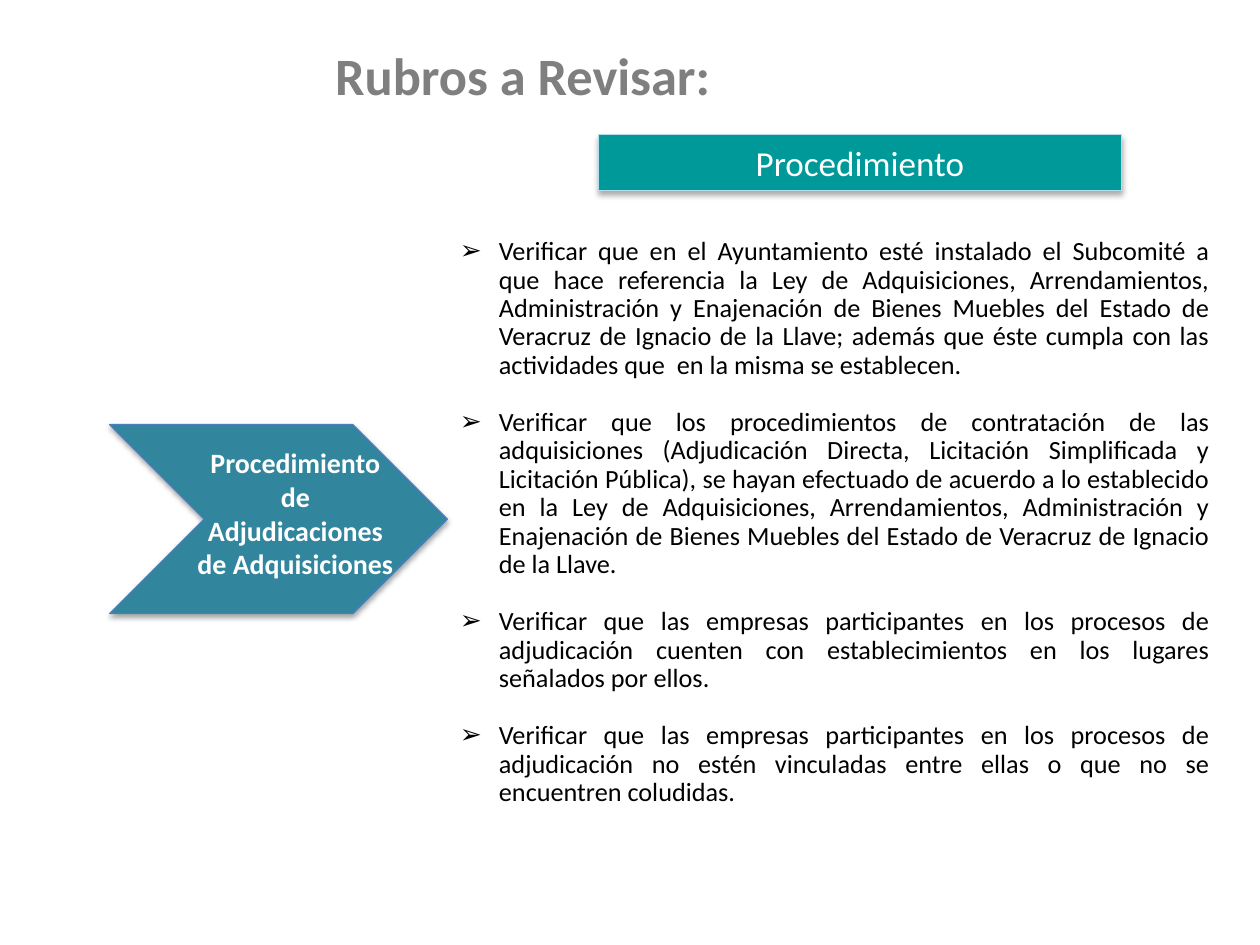
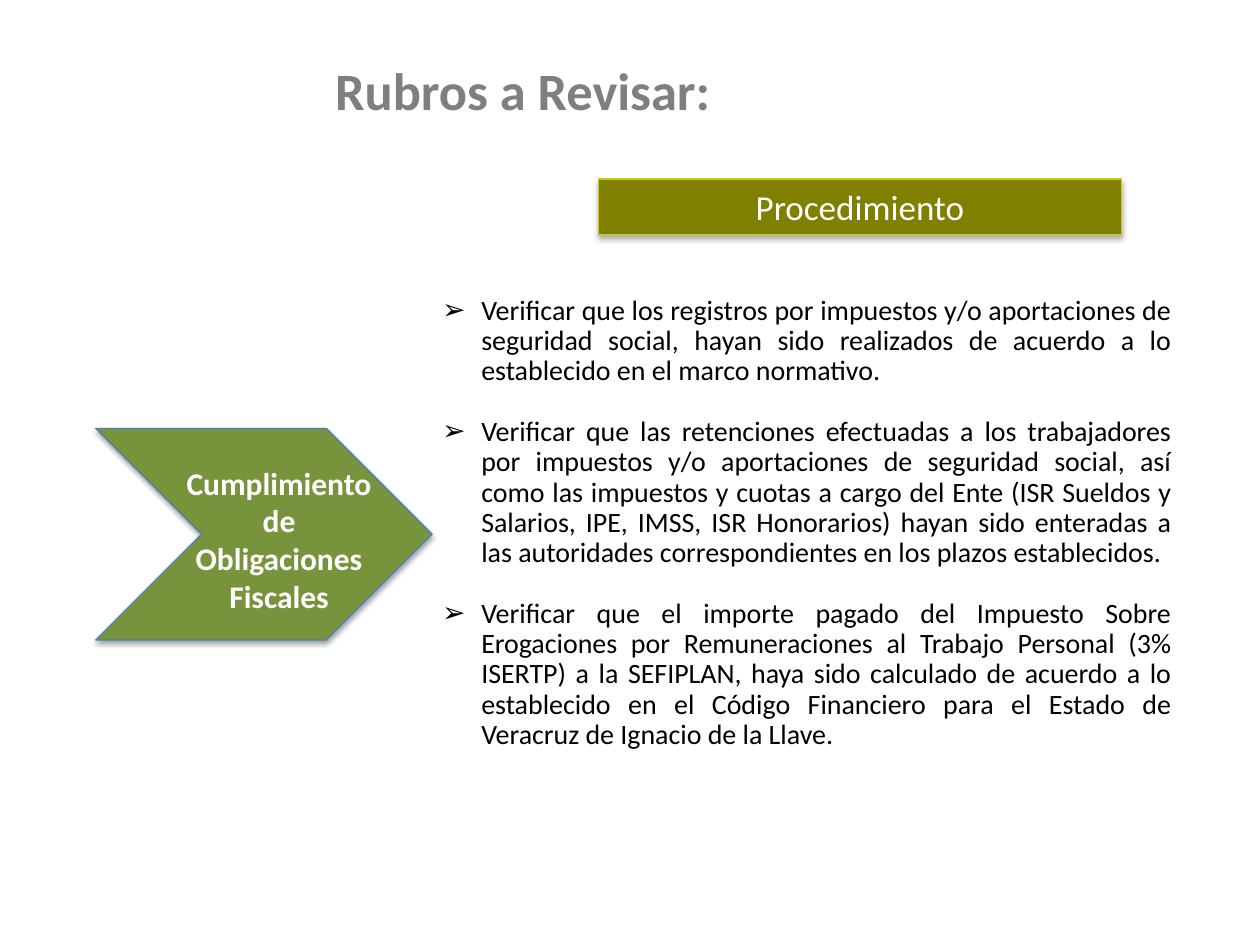
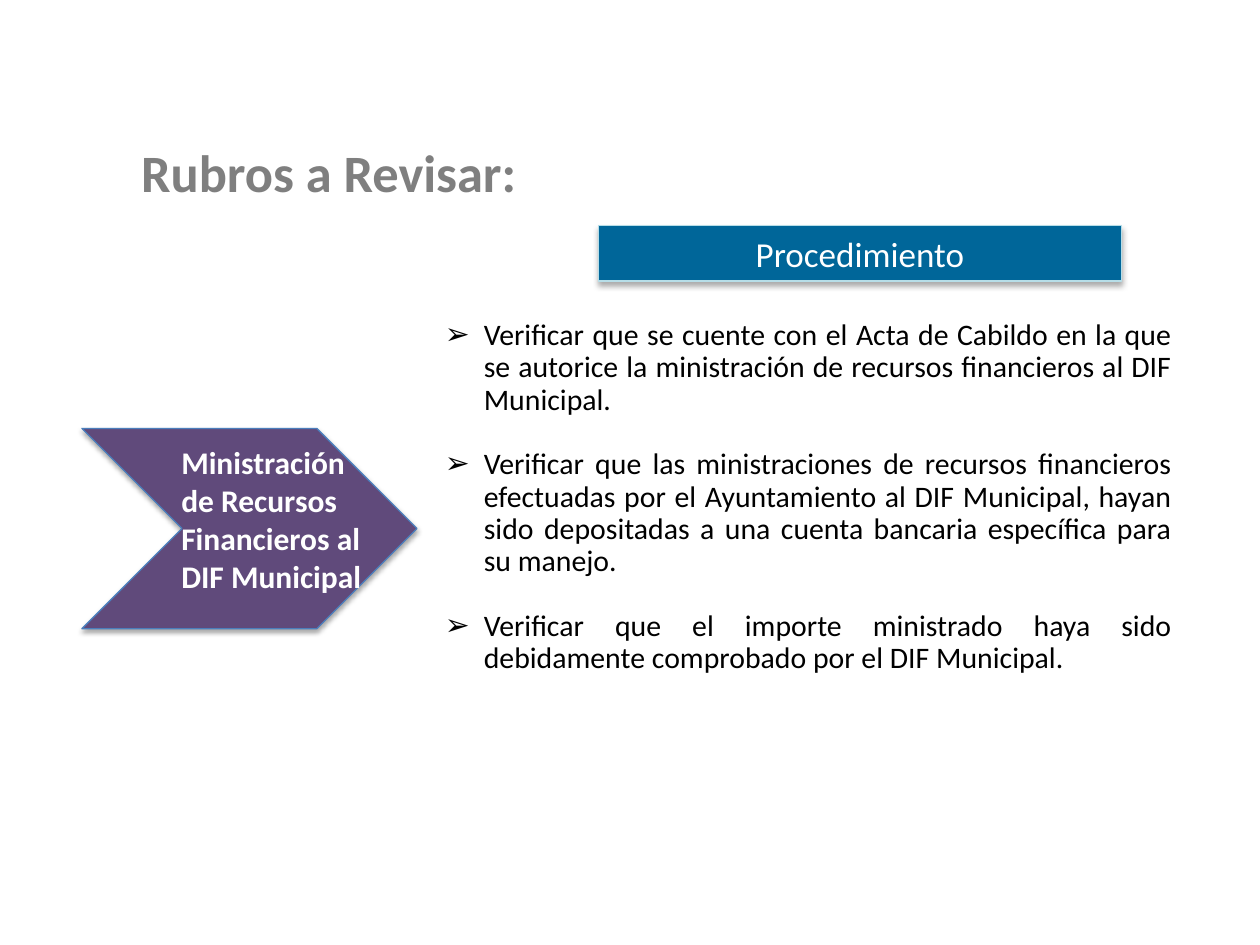
from lxml.etree import SubElement
from pptx import Presentation
from pptx.dml.color import RGBColor
from pptx.enum.shapes import MSO_SHAPE
from pptx.enum.text import MSO_ANCHOR, MSO_AUTO_SIZE, PP_ALIGN
from pptx.oxml.ns import qn
from pptx.util import Inches, Pt

CHEVRON, RECT = MSO_SHAPE.CHEVRON, MSO_SHAPE.RECTANGLE
TOP, MIDDLE = MSO_ANCHOR.TOP, MSO_ANCHOR.MIDDLE
LEFT, CENTER, JUSTIFY = PP_ALIGN.LEFT, PP_ALIGN.CENTER, PP_ALIGN.JUSTIFY
NO_FIT = MSO_AUTO_SIZE.NONE

# Shared look
FONT = "Calibri"
COLORS = {
    "title": "7F7F7F", "text": "000000", "white": "FFFFFF", "edge": "4B7EBC",
    "sky": "B7DEE8", "lime": "CCCC00", "teal": "31859C", "sea": "009999",
    "green": "77933C", "olive": "808000", "plum": "604A7B", "blue": "006699",
}
WIDTH, HEIGHT = Inches(10), Inches(7.5)
COL, ROW = WIDTH / 100, HEIGHT / 75
TITLE, BAND = "Rubros a Revisar:", "Procedimiento"
INDENT = Inches(0.31)
LEADING = 0.9
LINE = 1.22 * LEADING  # height of a text line, in font sizes

# Boxes are left, top, width, height in columns and rows
TOPICS = [
    {
        "title": (25.6, 2.9, 71.4, 7.8),
        "arrow": (8.7, 33.7, 26.8, 15), "fill": "teal",
        "label": (14.6, 34.9, 17.7, 11.8), "size": 16, "align": CENTER,
        "name": "Procedimiento de Adjudicaciones\nde Adquisiciones",
        "band": 10.7, "tint": "sea", "rim": "sky",
        "list": (35.5, 18.4, 61.5, 51), "body": 15,
        "items": [
            "Verificar que en el Ayuntamiento esté instalado el Subcomité a que hace referencia la Ley de Adquisiciones, Arrendamientos, Administración y Enajenación de Bienes Muebles del Estado de Veracruz de Ignacio de la Llave; además que éste cumpla con las actividades que  en la misma se establecen.",
            "Verificar que los procedimientos de contratación de las adquisiciones (Adjudicación Directa, Licitación Simplificada y Licitación Pública), se hayan efectuado de acuerdo a lo establecido en la Ley de Adquisiciones, Arrendamientos, Administración y Enajenación de Bienes Muebles del Estado de Veracruz de Ignacio de la Llave.",
            "Verificar que las empresas participantes en los procesos de adjudicación cuenten con establecimientos en los lugares señalados por ellos.",
            "Verificar que las empresas participantes en los procesos de adjudicación no estén vinculadas entre ellas o que no se encuentren coludidas.",
        ],
    },
    {
        "title": (25.6, 4.1, 71, 7.8),
        "arrow": (7.6, 34, 26.7, 16.8), "fill": "green",
        "label": (13.5, 36.3, 17.3, 13.1), "size": 18, "align": CENTER,
        "name": "Cumplimiento de Obligaciones Fiscales",
        "band": 14.2, "tint": "olive", "rim": "lime",
        "list": (34.1, 23, 59.9, 41.9), "body": 16,
        "items": [
            "Verificar que los registros por impuestos y/o aportaciones de seguridad social, hayan sido realizados de acuerdo a lo establecido en el marco normativo.",
            "Verificar que las retenciones efectuadas a los trabajadores por impuestos y/o aportaciones de seguridad social, así como las impuestos y cuotas a cargo del Ente (ISR Sueldos y Salarios, IPE, IMSS, ISR Honorarios) hayan sido enteradas a las autoridades correspondientes en los plazos establecidos.",
            "Verificar que el importe pagado del Impuesto Sobre Erogaciones por Remuneraciones al Trabajo Personal (3% ISERTP) a la SEFIPLAN, haya sido calculado de acuerdo a lo establecido en el Código Financiero para el Estado de Veracruz de Ignacio de la Llave.",
        ],
    },
    {
        "title": (10.2, 10.6, 85.3, 7.8),
        "arrow": (6.5, 34, 26.6, 15.9), "fill": "plum",
        "label": (13.4, 34.7, 16.5, 13.1), "size": 18, "align": LEFT,
        "name": "Ministración de Recursos Financieros al\nDIF Municipal",
        "band": 17.9, "tint": "blue", "rim": "sky",
        "list": (34.3, 24.9, 59.7, 36.7), "body": 17,
        "items": [
            "Verificar que se cuente con el Acta de Cabildo en la que se autorice la ministración de recursos financieros al DIF Municipal.",
            "Verificar que las ministraciones de recursos financieros efectuadas por el Ayuntamiento al DIF Municipal, hayan sido depositadas a una cuenta bancaria específica para su manejo.",
            "Verificar que el importe ministrado haya sido debidamente comprobado por el DIF Municipal.",
        ],
    },
]


def color(name):
    return RGBColor.from_string(COLORS[name])


def place(box):
    left, top, width, height = box
    return round(left * COL), round(top * ROW), round(width * COL), round(height * ROW)


def move(shape, box):
    shape.left, shape.top, shape.width, shape.height = place(box)


def write(shape, text, size, ink, align, anchor=TOP, bold=False):
    frame = shape.text_frame
    frame.text = text
    frame.word_wrap = True
    frame.auto_size = NO_FIT
    frame.vertical_anchor = anchor
    for para in frame.paragraphs:
        para.alignment = align
        for run in para.runs:
            font = run.font
            font.name, font.size, font.bold = FONT, Pt(size), bold
            font.color.rgb = color(ink)


def shade(shape, alpha, blur, dist):
    shape.shadow.inherit = False
    effects = shape._element.spPr.find(qn("a:effectLst"))
    outer = SubElement(effects, qn("a:outerShdw"), blurRad=str(Pt(blur)),
                       dist=str(Pt(dist)), dir="5400000", rotWithShape="0")
    black = SubElement(outer, qn("a:srgbClr"), val=COLORS["text"])
    SubElement(black, qn("a:alpha"), val=str(alpha * 1000))


def add_block(slide, kind, box, fill, rim, shadow):
    shape = slide.shapes.add_shape(kind, *place(box))
    shape.fill.solid()
    shape.fill.fore_color.rgb = color(fill)
    shape.line.color.rgb = color(rim)
    shape.line.width = Pt(0.75)
    shade(shape, *shadow)
    return shape


def add_title(slide, box):
    title = slide.shapes.title
    move(title, box)
    write(title, TITLE, 30, "title", LEFT, bold=True)


def add_arrow(slide, topic):
    add_block(slide, CHEVRON, topic["arrow"], topic["fill"], "edge", (35, 3.1, 1.8))
    label = slide.shapes.add_textbox(*place(topic["label"]))
    write(label, topic["name"], topic["size"], "white", topic["align"], bold=True)


def add_band(slide, top, fill, rim):
    band = add_block(slide, RECT, (47.5, top, 41.5, 4.4), fill, rim, (32, 3.5, 2.2))
    write(band, BAND, 20, "white", CENTER, MIDDLE)


def add_list(slide, box, items, size):
    body = slide.placeholders[1]
    move(body, box)
    write(body, "\n".join(items), size, "text", JUSTIFY)
    for i, para in enumerate(body.text_frame.paragraphs):
        props = para._p.get_or_add_pPr()
        props.set("marL", str(INDENT))
        props.set("indent", str(-INDENT))
        SubElement(props, qn("a:buChar"), char="➢")
        para.line_spacing = LEADING
        para.space_before = Pt(round(size * LINE, 1) if i else 0)
        para.space_after = Pt(0)


def main():
    deck = Presentation()
    deck.slide_width, deck.slide_height = WIDTH, HEIGHT
    for topic in TOPICS:
        slide = deck.slides.add_slide(deck.slide_layouts[1])
        add_title(slide, topic["title"])
        add_list(slide, topic["list"], topic["items"], topic["body"])
        add_arrow(slide, topic)
        add_band(slide, topic["band"], topic["tint"], topic["rim"])
    deck.save("out.pptx")


if __name__ == "__main__":
    main()
